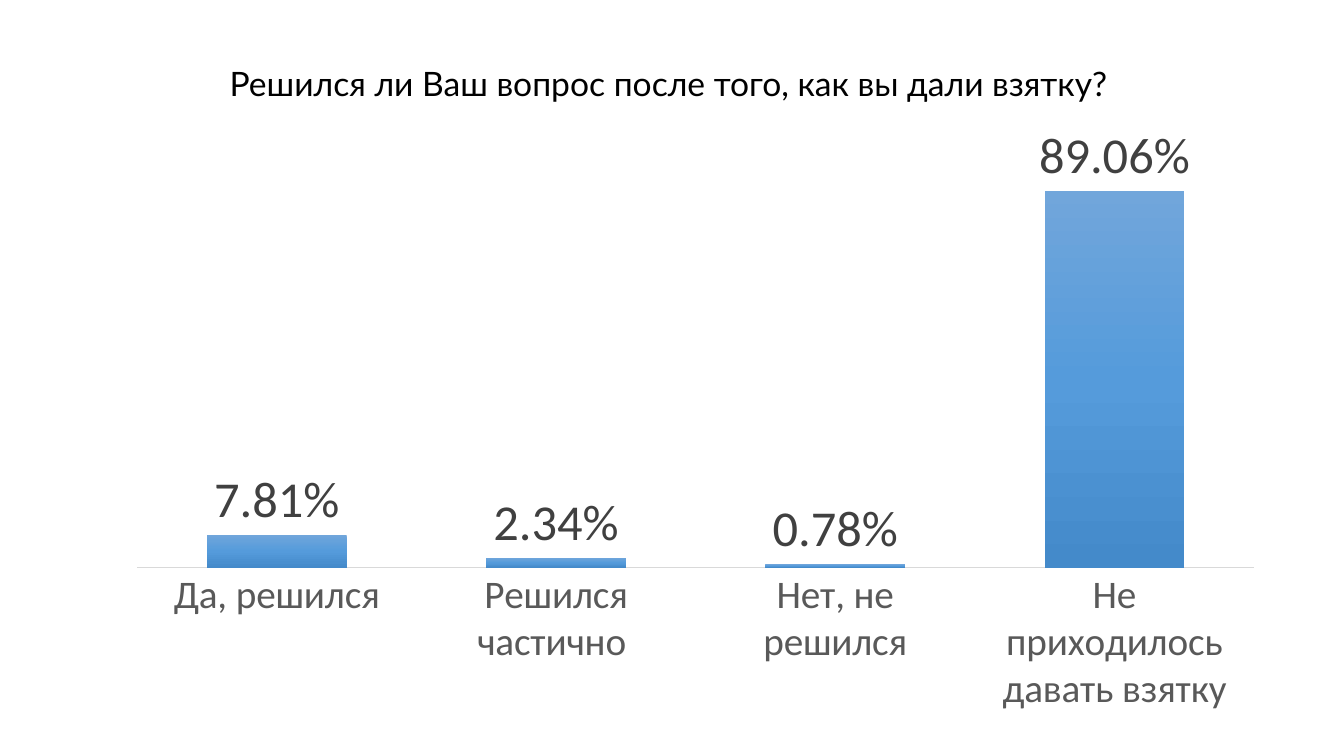
from pptx import Presentation
from pptx.chart.data import CategoryChartData
from pptx.dml.color import RGBColor
from pptx.enum.chart import XL_CHART_TYPE, XL_LABEL_POSITION, XL_TICK_MARK
from pptx.enum.text import MSO_AUTO_SIZE, PP_ALIGN
from pptx.oxml import parse_xml
from pptx.oxml.ns import nsdecls, qn
from pptx.util import Inches, Pt

TITLE = "Решился ли Ваш вопрос после того, как вы дали взятку?"
ANSWERS = {
    "Да, решился": 0.0781,
    "Решился частично\u00a0": 0.0234,
    "Нет, не решился": 0.0078,
    "Не приходилось давать взятку": 0.8906,
}
PERCENT = "0.00%"
TITLE_BOX = (0.58, 0.58, 12.1, 0.5)
CHART_BOX = (1.13, 1.24, 11.54, 5.93)
PLOT_SHARES = {"x": 0.02, "y": 0.03, "w": 0.96, "h": 0.71}

BLACK = RGBColor(0x00, 0x00, 0x00)
AXIS_TEXT = RGBColor(0x59, 0x59, 0x59)
LABEL_TEXT = RGBColor(0x40, 0x40, 0x40)
AXIS_LINE = RGBColor(0xD9, 0xD9, 0xD9)
BAR_STOPS = [
    (0, RGBColor(0x71, 0xA6, 0xDB)),
    (50, RGBColor(0x55, 0x9B, 0xDB)),
    (100, RGBColor(0x44, 0x8A, 0xCA)),
]


def set_font(font, name, size, color):
    font.name, font.size = name, Pt(size)
    font.color.rgb = color


def add_title(slide):
    tf = slide.shapes.add_textbox(*map(Inches, TITLE_BOX)).text_frame
    tf.word_wrap = True
    tf.auto_size = MSO_AUTO_SIZE.SHAPE_TO_FIT_TEXT
    p = tf.paragraphs[0]
    p.alignment = PP_ALIGN.CENTER
    r = p.add_run()
    r.text = TITLE
    set_font(r.font, "Lato", 24, BLACK)


def fill_gradient(fmt, stops):
    """Fill from top to bottom with any number of (percent, colour) stops."""
    fmt.fill.gradient()
    fmt.fill.gradient_angle = 270  # counter-clockwise, so downwards
    gs_list = fmt.fill.gradient_stops
    xml = "".join(
        f'<a:gs pos="{pos * 1000}"><a:srgbClr val="{color}"/></a:gs>'
        for pos, color in stops
    )
    new_list = parse_xml(f"<a:gsLst {nsdecls('a')}>{xml}</a:gsLst>")
    old_list = next(iter(gs_list)) and fmt.fill._xPr.find(".//" + qn("a:gsLst"))
    old_list.getparent().replace(old_list, new_list)


def place_plot(chart, shares):
    """Fix the inner plot area as shares of the chart's size."""
    area = chart._chartSpace.chart.plotArea
    for old in area.findall(qn("c:layout")):
        area.remove(old)
    modes = "".join(f'<c:{k}Mode val="edge"/>' for k in "xy")
    sizes = "".join(f'<c:{k} val="{v}"/>' for k, v in shares.items())
    area.insert(0, parse_xml(
        f"<c:layout {nsdecls('c')}><c:manualLayout>"
        f'<c:layoutTarget val="inner"/>{modes}{sizes}'
        "</c:manualLayout></c:layout>"
    ))


def add_answer_chart(slide):
    data = CategoryChartData(number_format=PERCENT)
    data.categories = list(ANSWERS)
    data.add_series("Series 1", list(ANSWERS.values()))
    chart = slide.shapes.add_chart(
        XL_CHART_TYPE.COLUMN_CLUSTERED, *map(Inches, CHART_BOX), data
    ).chart
    chart.has_title = chart.has_legend = False
    set_font(chart.font, "Calibri", 28, BLACK)

    values = chart.value_axis
    values.minimum_scale, values.maximum_scale = 0, 1
    values.has_major_gridlines = False
    values.visible = False

    answers = chart.category_axis
    answers.major_tick_mark = answers.minor_tick_mark = XL_TICK_MARK.NONE
    answers.format.line.color.rgb = AXIS_LINE
    answers.format.line.width = Pt(1)
    set_font(answers.tick_labels.font, "Calibri", 28, AXIS_TEXT)

    plot = chart.plots[0]
    plot.gap_width, plot.overlap = 100, -24
    plot.vary_by_categories = False
    series = plot.series[0]
    series.invert_if_negative = False
    fill_gradient(series.format, BAR_STOPS)

    labels = series.data_labels
    labels.show_value = True
    labels.number_format, labels.number_format_is_linked = PERCENT, False
    labels.position = XL_LABEL_POSITION.OUTSIDE_END
    set_font(labels.font, "Calibri", 36, LABEL_TEXT)
    place_plot(chart, PLOT_SHARES)


def main():
    prs = Presentation()
    prs.slide_width, prs.slide_height = Inches(13.33), Inches(7.5)
    slide = prs.slides.add_slide(prs.slide_layouts[6])
    add_title(slide)
    add_answer_chart(slide)
    prs.save("out.pptx")


if __name__ == "__main__":
    main()
